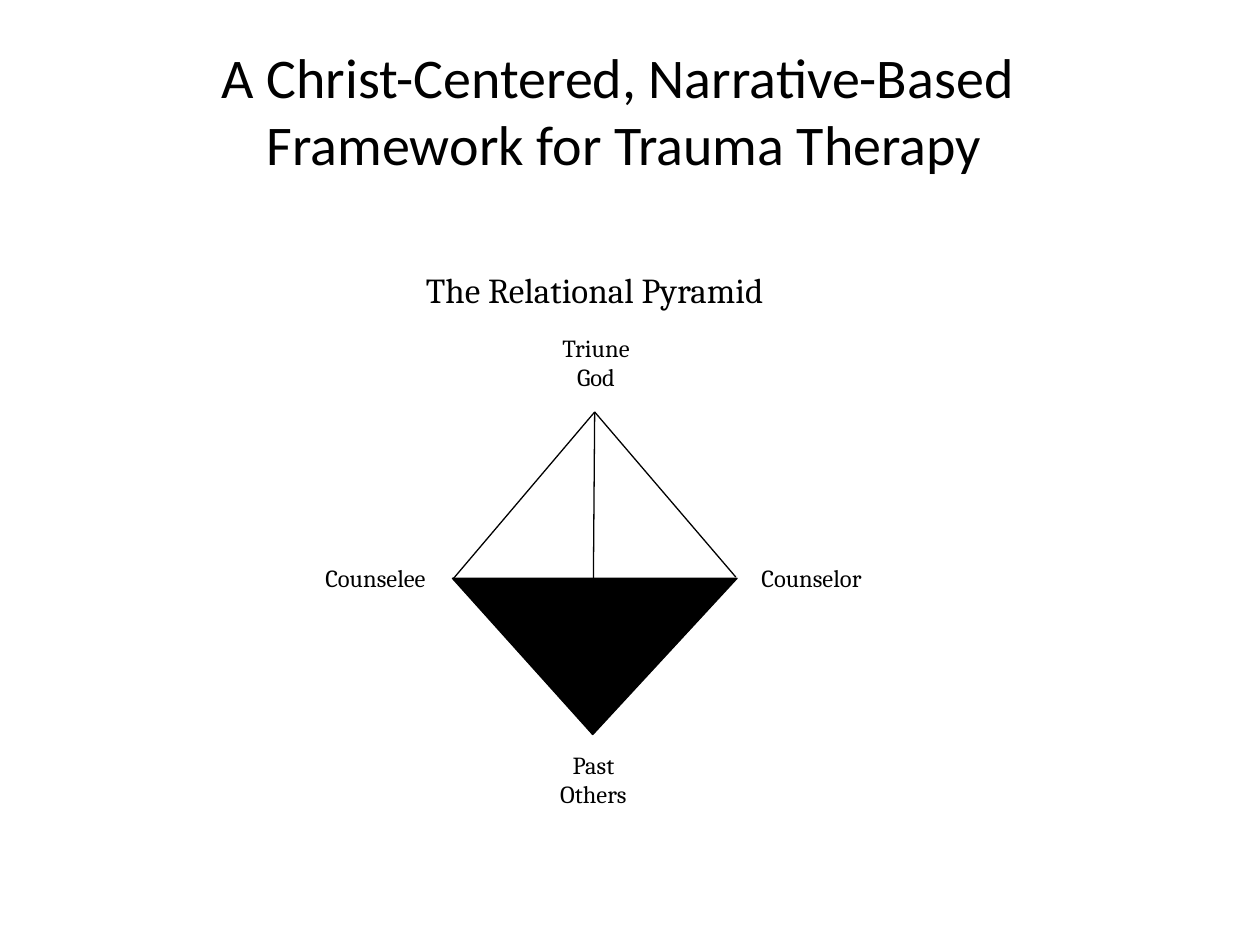
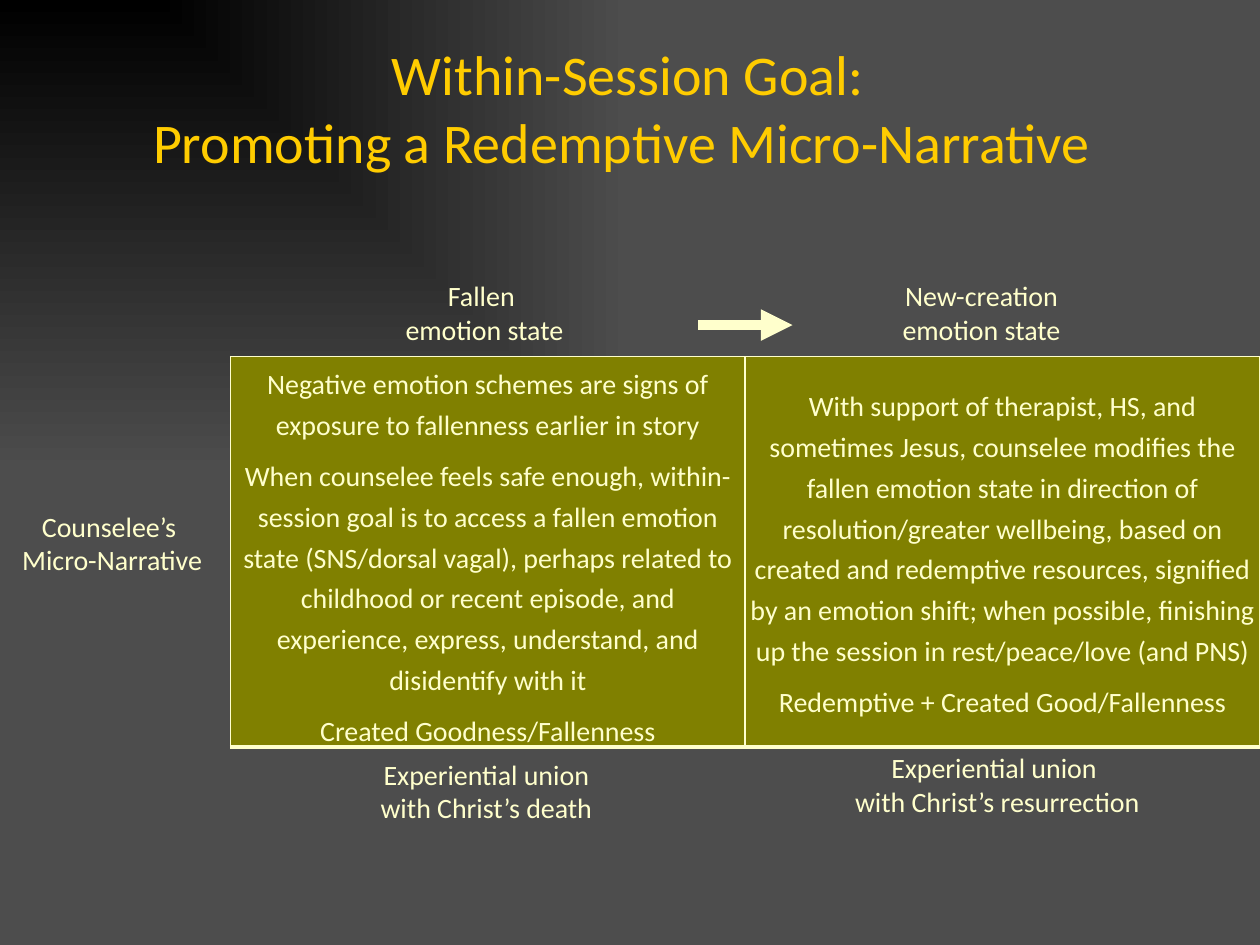
from dataclasses import dataclass
from lxml.etree import SubElement as Sub
from pptx import Presentation
from pptx.dml.color import RGBColor as Rgb
from pptx.enum.shapes import MSO_CONNECTOR as Link, MSO_SHAPE as Kind
from pptx.enum.text import MSO_ANCHOR as Anchor, PP_ALIGN as Align
from pptx.oxml.ns import qn
from pptx.util import Inches, Pt


@dataclass(frozen=True)
class Theme:
    """Colours, fonts and type sizes of the deck."""
    black: str = "000000"
    white: str = "FFFFFF"
    gray: str = "4D4D4D"
    gold: str = "FFCC00"
    cream: str = "FFFFCC"
    olive: str = "808000"
    sans: str = "Calibri"
    serif: str = "Cambria"
    head: int = 32
    sub: int = 20
    body: int = 16
    small: int = 14
    inset: float = 0.04
    hair: float = 0.75


T = Theme()


def rgb(code):
    """Turn a hex code into a colour."""
    return Rgb.from_string(code)


def place(box, left, top, *size):
    """Shift a position by the corner of a box and give lengths."""
    return [Inches(n) for n in (box[0] + left, box[1] + top, *size)]


def write(frame, text, size=T.body, color=T.cream, font=T.sans,
          spacing=None, after=None):
    """Fill a text frame with centred text, one paragraph a line."""
    for i, line in enumerate(text.split("\n")):
        para = frame.add_paragraph() if i else frame.paragraphs[0]
        para.text = line
        para.alignment = Align.CENTER
        para.font.size, para.font.name = Pt(size), font
        para.font.color.rgb = rgb(color)
        if spacing:
            para.line_spacing = spacing
        if after:
            para.space_after = Pt(after)


def trim(item):
    """Set equal small margins on a frame or a cell."""
    for side in ("left", "top", "right", "bottom"):
        setattr(item, f"margin_{side}", Inches(T.inset))


def paint(shape, color):
    """Give a shape one colour for fill and line, and no shadow."""
    shape.shadow.inherit = False
    shape.fill.solid()
    shape.fill.fore_color.rgb = rgb(color)
    shape.line.color.rgb = rgb(color)
    shape.line.width = Pt(T.hair)


def title(slide, text, box, color):
    """Add the slide title."""
    frame = slide.shapes.add_textbox(*map(Inches, box)).text_frame
    frame.word_wrap = True
    frame.vertical_anchor = Anchor.MIDDLE
    write(frame, text, size=T.head, color=color)


def label(slide, text, spot, plate=None, **form):
    """Add a label, on a coloured plate if one is named."""
    if plate:
        shape = slide.shapes.add_shape(Kind.RECTANGLE, *spot)
        paint(shape, plate)
    else:
        shape = slide.shapes.add_textbox(*spot)
    frame = shape.text_frame
    frame.word_wrap = True
    frame.vertical_anchor = Anchor.TOP
    trim(frame)
    write(frame, text, **form)


def stroke(slide, start, end, color, width, tip=False):
    """Add a straight line, with an arrowhead on request."""
    line = slide.shapes.add_connector(Link.STRAIGHT, *start, *end)
    line.line.color.rgb = rgb(color)
    line.line.width = Pt(width)
    if tip:
        Sub(line.line._get_or_add_ln(), qn("a:tailEnd"), type="triangle")
    Sub(line.element.spPr, qn("a:effectLst"))


def pyramid(slide, box):
    """Draw the relational pyramid with its labels."""
    base = slide.shapes.add_shape(Kind.ISOSCELES_TRIANGLE,
                                  *place(box, 1.12, 2.5, 2.26, 1.24))
    base.rotation = 180
    base.adjustments[0] = 0.507
    paint(base, T.black)
    apex = place(box, 2.25, 1.18)
    for foot in ((1.13, 2.5), (3.37, 2.49), (2.23, 3.74)):
        stroke(slide, apex, place(box, *foot), T.black, T.hair)
    for text, spot, size in (
            ("The Relational Pyramid", (0.79, 0, 2.92, 0.34), T.sub),
            ("Triune God", (1.92, 0.51, 0.68, 0.47), T.small),
            ("Counselee", (0, 2.34, 1.02, 0.35), T.small),
            ("Counselor", (3.46, 2.34, 1.02, 0.35), T.small),
            ("Past Others", (1.9, 3.82, 0.68, 0.55), T.small)):
        label(slide, text, place(box, *spot), plate=T.white,
              size=size, color=T.black, font=T.serif)


def edge(cell):
    """Draw the cell borders, with a heavy one below."""
    props = cell._tc.get_or_add_tcPr()
    for i, (side, width) in enumerate(zip("LRTB", (1, 1, 1, 3))):
        line = Sub(props, qn(f"a:ln{side}"), w=str(Pt(width)))
        Sub(Sub(line, qn("a:solidFill")), qn("a:srgbClr"), val=T.cream)
        props.insert(i, line)


def states(slide, box, texts):
    """Add the table that compares the two emotion states."""
    table = slide.shapes.add_table(1, len(texts), *map(Inches, box)).table
    table.first_row = table.horz_banding = False
    for cell, text in zip(table.iter_cells(), texts):
        cell.fill.solid()
        cell.fill.fore_color.rgb = rgb(T.olive)
        cell.vertical_anchor = Anchor.MIDDLE
        trim(cell)
        edge(cell)
        write(cell.text_frame, text, spacing=1.19, after=6)


def story(slide, box):
    """Lay out the table with its labels and arrow."""
    label(slide, "Counselee’s \nMicro-Narrative",
          place(box, 0, 1.83, 1.78, 0.75))
    states(slide, (box[0] + 1.83, box[1] + 0.66, 8.17, 3.09), (
        "Negative emotion schemes are signs of exposure to fallenness "
        "earlier in story\n"
        "When counselee feels safe enough, within-session goal is to access "
        "a fallen emotion state (SNS/dorsal vagal), perhaps related to "
        "childhood or recent episode, and experience, express, understand, "
        "and disidentify with it\n"
        "Created Goodness/Fallenness",
        "With support of therapist, HS, and sometimes Jesus, counselee "
        "modifies the fallen emotion state in direction of "
        "resolution/greater wellbeing, based on created and redemptive "
        "resources, signified by an emotion shift; when possible, finishing "
        "up the session in rest/peace/love (and PNS)\n"
        "Redemptive + Created Good/Fallenness"))
    stroke(slide, place(box, 5.54, 0.41), place(box, 6.29, 0.41),
           T.cream, 6, tip=True)
    for text, left, top, width in (
            ("Fallen \nemotion state", 2.97, 0, 1.75),
            ("New-creation emotion state", 6.75, 0, 2.08),
            ("Experiential union with Christ’s death", 2.82, 3.8, 2.08),
            ("Experiential union \nwith Christ’s resurrection",
             6.58, 3.75, 2.67)):
        label(slide, text, place(box, left, top, width, 0.6))


def shade(slide):
    """Set a gradient that spreads from the top left corner."""
    fill = slide.background.fill
    fill.gradient()
    for stop, color in zip(fill.gradient_stops, (T.black, T.gray)):
        stop.color.rgb = rgb(color)
    for i, stop in enumerate(fill.gradient_stops):
        stop.position = i
    grad = slide.element.find(".//" + qn("a:gradFill"))
    grad.remove(grad.find(qn("a:lin")))
    Sub(Sub(grad, qn("a:path"), {"path": "rect"}), qn("a:fillToRect"),
        r="100000", b="100000")


def main():
    """Build and save the deck."""
    deck = Presentation()
    deck.slide_width, deck.slide_height = Inches(10), Inches(7.5)
    first, second = (deck.slides.add_slide(deck.slide_layouts[6])
                     for _ in range(2))
    title(first, "A Christ-Centered, Narrative-Based \v"
          "Framework for Trauma Therapy", (0.33, 0.08, 9.25, 1.58), T.black)
    pyramid(first, (2.47, 2.09))
    shade(second)
    title(second, "Within-Session Goal:\v"
          "Promoting a Redemptive Micro-Narrative ",
          (0.22, 0.06, 9.53, 1.58), T.gold)
    story(second, (0, 2.17))
    deck.save("out.pptx")


if __name__ == "__main__":
    main()
